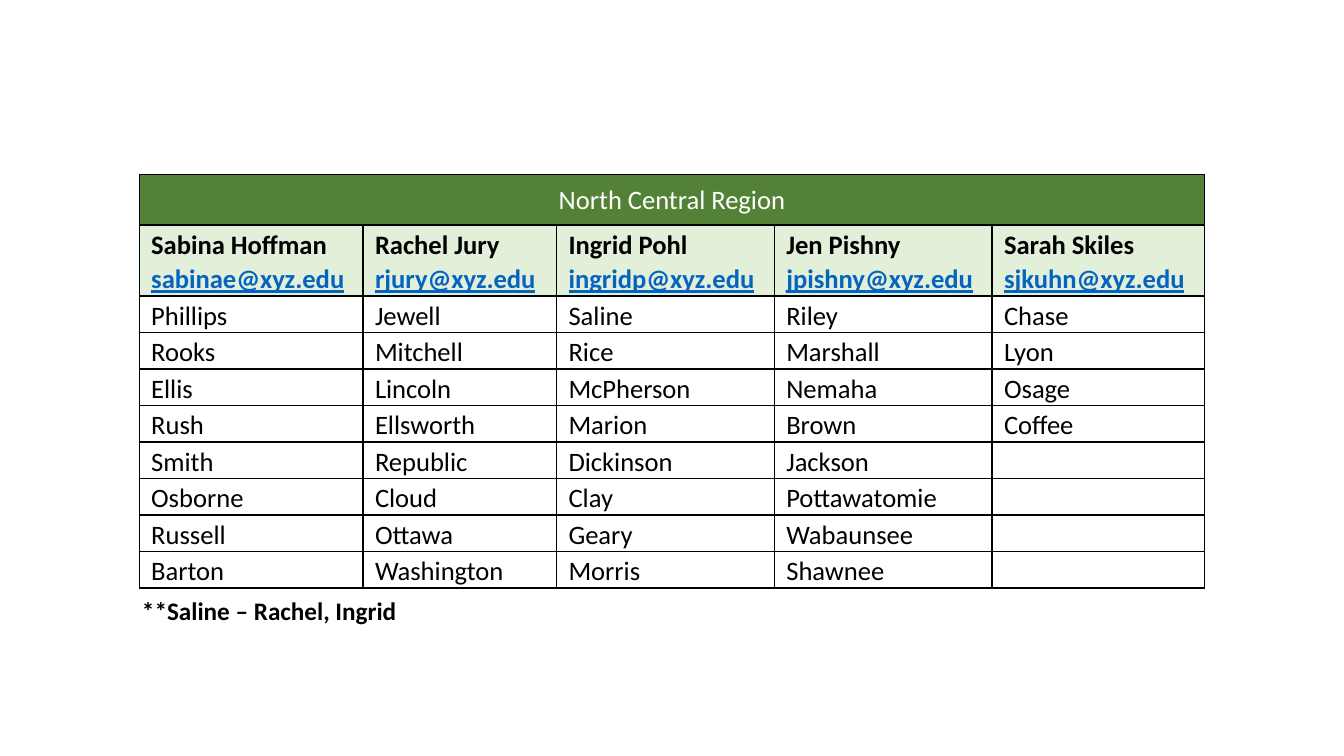
from lxml import etree
from pptx import Presentation
from pptx.dml.color import RGBColor
from pptx.enum import text
from pptx.oxml import ns
from pptx.util import Inches, Pt

FONT = "Calibri"
BLACK, WHITE = "000000", "FFFFFF"
DARK_GREEN, PALE_GREEN, LINK_BLUE = "538135", "E2EFD9", "0563C1"

REGION = "North Central Region"
AGENTS = [
    ("Sabina Hoffman", "sabinae@xyz.edu",
     ["Phillips", "Rooks", "Ellis", "Rush", "Smith", "Osborne", "Russell", "Barton"]),
    ("Rachel Jury", "rjury@xyz.edu",
     ["Jewell", "Mitchell", "Lincoln", "Ellsworth", "Republic", "Cloud", "Ottawa", "Washington"]),
    ("Ingrid Pohl", "ingridp@xyz.edu",
     ["Saline", "Rice", "McPherson", "Marion", "Dickinson", "Clay", "Geary", "Morris"]),
    ("Jen Pishny", "jpishny@xyz.edu",
     ["Riley", "Marshall", "Nemaha", "Brown", "Jackson", "Pottawatomie", "Wabaunsee", "Shawnee"]),
    ("Sarah Skiles", "sjkuhn@xyz.edu",
     ["Chase", "Lyon", "Osage", "Coffee"]),
]
COLUMN_WIDTHS = [2.22, 1.92, 2.16, 2.16, 2.11]
COUNTY_ROWS = max(len(counties) for _, _, counties in AGENTS)
ROW_HEIGHTS = [0.44, 0.63] + [0.33] * COUNTY_ROWS


def color(hex_value):
    return RGBColor.from_string(hex_value)


def write(paragraph, words, size=19, hex_value=BLACK, bold=False, underline=False):
    paragraph.line_spacing = 1.07
    run = paragraph.add_run()
    run.text = words
    font = run.font
    font.name, font.size = FONT, Pt(size)
    font.bold, font.underline = bold, underline
    font.color.rgb = color(hex_value)


def style_cell(cell, fill=None, margins=(0.12, 0.02, 0.12, 0)):
    (cell.margin_left, cell.margin_top,
     cell.margin_right, cell.margin_bottom) = map(Inches, margins)
    # Thin black border on every side
    properties = cell._tc.get_or_add_tcPr()
    for side in ("lnL", "lnR", "lnT", "lnB"):
        line = etree.SubElement(properties, ns.qn(f"a:{side}"), w=str(Pt(1)))
        solid = etree.SubElement(line, ns.qn("a:solidFill"))
        etree.SubElement(solid, ns.qn("a:srgbClr"), val=BLACK)
    if fill:
        cell.fill.solid()
        cell.fill.fore_color.rgb = color(fill)
    else:
        cell.fill.background()


def add_region_table(slide, left, top, width, height):
    frame = slide.shapes.add_table(len(ROW_HEIGHTS), len(AGENTS), Inches(left),
                                   Inches(top), Inches(width), Inches(height))
    table = frame.table
    table.first_row = table.horz_banding = False
    for column, column_width in zip(table.columns, COLUMN_WIDTHS):
        column.width = Inches(column_width)
    for row, row_height in zip(table.rows, ROW_HEIGHTS):
        row.height = Inches(row_height)

    # Region title across all columns
    title = table.cell(0, 0)
    title.merge(table.cell(0, len(AGENTS) - 1))
    for index in range(len(AGENTS)):
        style_cell(table.cell(0, index), DARK_GREEN, (0.16, 0.08, 0.16, 0.08))
    paragraph = title.text_frame.paragraphs[0]
    paragraph.alignment = text.PP_ALIGN.CENTER
    write(paragraph, REGION, hex_value=WHITE)

    # One column per agent: name and address, then counties
    for index, (name, address, counties) in enumerate(AGENTS):
        header = table.cell(1, index)
        style_cell(header, PALE_GREEN)
        write(header.text_frame.paragraphs[0], name, bold=True)
        write(header.text_frame.add_paragraph(), address,
              hex_value=LINK_BLUE, bold=True, underline=True)
        for row in range(COUNTY_ROWS):
            cell = table.cell(row + 2, index)
            style_cell(cell)
            if row < len(counties):
                write(cell.text_frame.paragraphs[0], counties[row])


def add_footnote(slide, left, top, width, height):
    box = slide.shapes.add_textbox(Inches(left), Inches(top), Inches(width), Inches(height))
    box.text_frame.word_wrap = True
    paragraph = box.text_frame.paragraphs[0]
    paragraph.space_after = Pt(8)
    write(paragraph, "**Saline – Rachel, Ingrid", size=18, bold=True)


def main():
    presentation = Presentation()
    presentation.slide_width, presentation.slide_height = Inches(13.33), Inches(7.5)
    slide = presentation.slides.add_slide(presentation.slide_layouts[6])
    add_region_table(slide, 1.38, 1.73, sum(COLUMN_WIDTHS), sum(ROW_HEIGHTS))
    add_footnote(slide, 1.31, 5.84, 6.67, 0.41)
    presentation.save("out.pptx")


if __name__ == "__main__":
    main()
